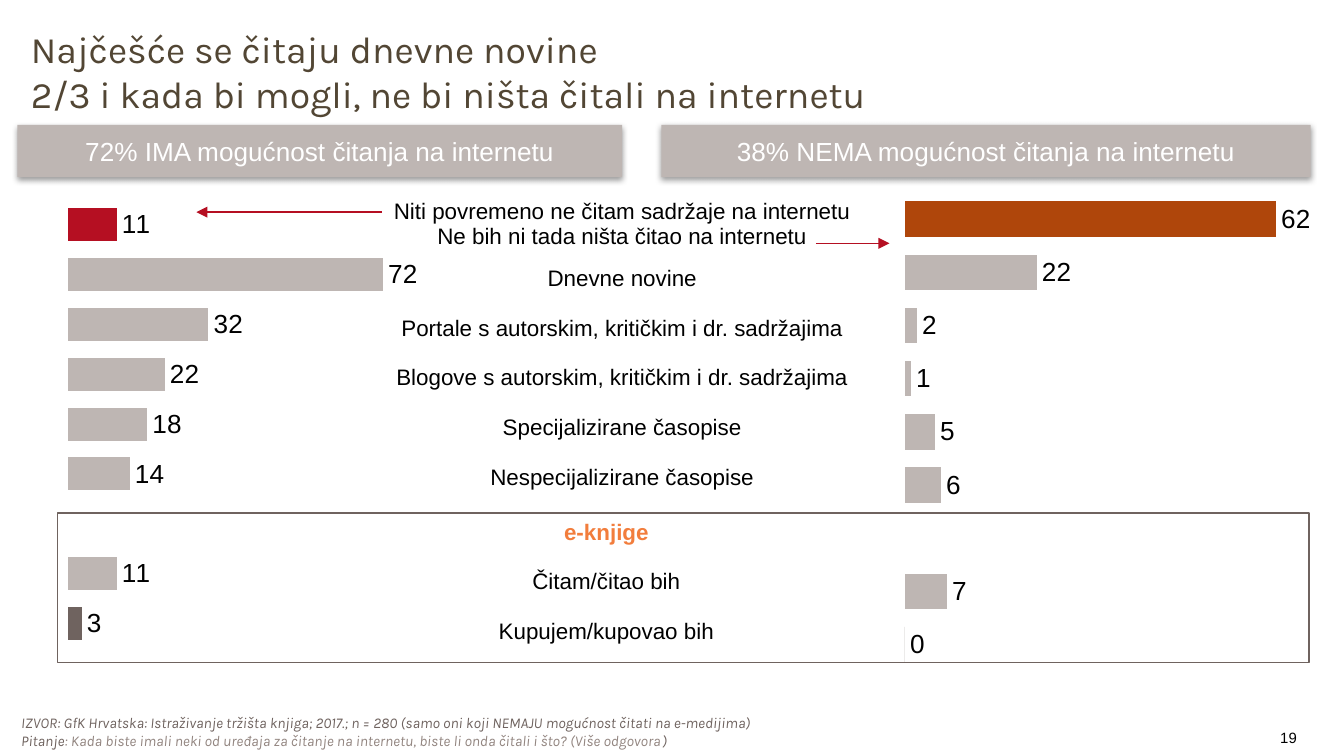
"""Build the slide on reading newspapers, magazines and e-books online."""
from lxml import etree
from pptx import Presentation
from pptx.chart.data import CategoryChartData
from pptx.dml.color import RGBColor
from pptx.enum.chart import XL_CHART_TYPE, XL_LABEL_POSITION
from pptx.enum.shapes import MSO_CONNECTOR, MSO_SHAPE
from pptx.enum.text import MSO_ANCHOR, MSO_AUTO_SIZE, PP_ALIGN
from pptx.oxml import parse_xml
from pptx.oxml.ns import nsdecls, qn
from pptx.util import Cm, Pt

BAR = XL_CHART_TYPE.BAR_CLUSTERED
OUTSIDE = XL_LABEL_POSITION.OUTSIDE_END
STRAIGHT = MSO_CONNECTOR.STRAIGHT
RECTANGLE = MSO_SHAPE.RECTANGLE
TOP, MIDDLE = MSO_ANCHOR.TOP, MSO_ANCHOR.MIDDLE
NO_FIT = MSO_AUTO_SIZE.NONE
CENTER, JUSTIFY, RIGHT = PP_ALIGN.CENTER, PP_ALIGN.JUSTIFY, PP_ALIGN.RIGHT

BLACK = RGBColor(0x00, 0x00, 0x00)
WHITE = RGBColor(0xFF, 0xFF, 0xFF)
OLIVE = RGBColor(0x52, 0x46, 0x34)
TAUPE = RGBColor(0x6F, 0x63, 0x5F)
LIGHT_TAUPE = RGBColor(0x92, 0x85, 0x80)
SAND = RGBColor(0xBE, 0xB6, 0xB3)
RED = RGBColor(0xB5, 0x0F, 0x22)
RUST = RGBColor(0xAF, 0x46, 0x0B)
ORANGE = RGBColor(0xF2, 0x7D, 0x3C)

TITLE = {"name": "Karla", "size": Pt(20), "bold": False, "color": OLIVE}
SOURCE = {"name": "Karla", "size": Pt(8), "italic": True, "color": TAUPE}
QUESTION = {**SOURCE, "color": LIGHT_TAUPE}
BANNER = {"name": "Arial", "size": Pt(14), "color": WHITE}
VALUE = {**BANNER, "color": BLACK}
LABEL = {**VALUE, "size": Pt(12)}
HEADING = {**LABEL, "bold": True, "color": ORANGE}
PAGE_NUMBER = {**VALUE, "size": Pt(8)}

PLAIN_TABLE = "{2D5ABB26-0587-4C30-8999-92F81FD0307C}"
TABLE_WIDTH = 10.72
ROW_HEIGHT = 0.94
BANNERS = [
    (0.33, 11.43, "72% IMA mogućnost čitanja na internetu"),
    (12.5, 12.27, "38% NEMA mogućnost čitanja na internetu"),
]
READING = [
    ["Niti povremeno ne čitam sadržaje na internetu", "Ne bih ni tada ništa čitao na internetu"],
    ["Dnevne novine"],
    ["Portale s autorskim, kritičkim i dr. sadržajima"],
    ["Blogove s autorskim, kritičkim i dr. sadržajima"],
    ["Specijalizirane časopise"],
    ["Nespecijalizirane časopise"],
]
BOOKS = [["e-knjige"], ["Čitam/čitao bih"], ["Kupujem/kupovao bih"]]
SOURCE_LINES = [
    [("IZVOR: GfK Hrvatska: Istraživanje tržišta knjiga; 2017.; n = 280 "
      "(samo oni koji NEMAJU mogućnost čitati na e-medijima)", SOURCE)],
    [("Pitanje", SOURCE),
     (": Kada biste imali neki od uređaja za čitanje na internetu, "
      "biste li onda čitali i što? (Više odgovora", QUESTION),
     (")", SOURCE)],
]


def format_font(font, style):
    """Apply a dict of format values to a font."""
    for key, value in style.items():
        if key == "color":
            font.color.rgb = value
        else:
            setattr(font, key, value)


def write_lines(frame, lines, align, anchor=MIDDLE):
    """Write one paragraph for each list of (text, style) spans."""
    frame.word_wrap = True
    frame.vertical_anchor = anchor
    for index, spans in enumerate(lines):
        para = frame.add_paragraph() if index else frame.paragraphs[0]
        para.alignment = align
        for text, style in spans:
            span = para.add_run()
            span.text = text
            format_font(span.font, style)


def place_title(page):
    """Move and fill the title placeholder."""
    title = page.shapes.title
    title.left, title.top, title.width, title.height = Cm(0.33), Cm(0.64), Cm(22.4), Cm(1.42)
    title.text_frame.auto_size = NO_FIT
    lines = ["Najčešće se čitaju dnevne novine",
             "2/3 i kada bi mogli, ne bi ništa čitali na internetu"]
    write_lines(title.text_frame, [[(line, TITLE)] for line in lines], JUSTIFY)


def add_text(page, left, top, width, height, lines, align):
    """Add a text box and return it."""
    box = page.shapes.add_textbox(Cm(left), Cm(top), Cm(width), Cm(height))
    write_lines(box.text_frame, lines, align)
    return box


def add_banner(page, left, width, text):
    """Add a filled heading with a soft shadow below it."""
    box = page.shapes.add_shape(RECTANGLE, Cm(left), Cm(2.36), Cm(width), Cm(0.99))
    box.fill.solid()
    box.fill.fore_color.rgb = SAND
    box.line.fill.background()
    box._element.spPr.append(parse_xml(
        f'<a:effectLst {nsdecls("a")}><a:outerShdw blurRad="{Pt(3.1)}" dist="{Pt(1.6)}" '
        'dir="5400000" rotWithShape="0"><a:srgbClr val="000000"><a:alpha val="38000"/>'
        '</a:srgbClr></a:outerShdw></a:effectLst>'))
    write_lines(box.text_frame, [[(text, BANNER)]], CENTER)


def add_frame(page):
    """Add the outline around the e-book rows."""
    box = page.shapes.add_shape(RECTANGLE, Cm(1.09), Cm(9.7), Cm(23.65), Cm(2.82))
    box.shadow.inherit = False
    box.fill.background()
    box.line.color.rgb = TAUPE
    box.line.width = Pt(0.75)


def add_labels(page, left, top, rows, first_style):
    """Add a one-column table of row labels without fill or borders."""
    shape = page.shapes.add_table(len(rows), 1, Cm(left), Cm(top),
                                  Cm(TABLE_WIDTH), Cm(ROW_HEIGHT * len(rows)))
    table = shape.table
    table.first_row = table.horz_banding = False
    table._tbl.tblPr.find(qn("a:tableStyleId")).text = PLAIN_TABLE
    for index, lines in enumerate(rows):
        table.rows[index].height = Cm(ROW_HEIGHT)
        cell = table.cell(index, 0)
        cell.fill.background()
        style = LABEL if index else first_style
        write_lines(cell.text_frame, [[(line, style)] for line in lines], CENTER)
        cell.vertical_anchor = TOP


def set_plot_area(chart, layout):
    """Fix the inner plot area as fractions of the chart."""
    area = chart._chartSpace.chart.plotArea
    for old in area.findall(qn("c:layout")):
        area.remove(old)
    values = "".join(f'<c:{key} val="{value}"/>' for key, value in layout.items())
    area.insert(0, parse_xml(
        f'<c:layout {nsdecls("c")}><c:manualLayout><c:layoutTarget val="inner"/>'
        f'<c:xMode val="edge"/><c:yMode val="edge"/>{values}</c:manualLayout></c:layout>'))


def add_bars(page, left, top, width, values, maximum, first_color, layout):
    """Add a bar chart with hidden axes and value labels."""
    data = CategoryChartData(number_format="#,##0")
    data.categories = [str(number) for number in range(1, len(values) + 1)]
    data.add_series("Series 1", values)
    chart = page.shapes.add_chart(BAR, Cm(left), Cm(top), Cm(width), Cm(9.63), data).chart
    format_font(chart.font, LABEL)
    chart.has_legend = chart.has_title = False
    chart.category_axis.reverse_order = True
    chart.value_axis.minimum_scale = 0
    chart.value_axis.maximum_scale = maximum
    chart.value_axis.has_major_gridlines = False
    chart.category_axis.visible = chart.value_axis.visible = False
    plot = chart.plots[0]
    plot.gap_width = 50
    plot.vary_by_categories = False
    series = plot.series[0]
    series.invert_if_negative = False
    for target, color in [(series, SAND), (series.points[0], first_color),
                          (series.points[len(values) - 1], TAUPE)]:
        target.format.fill.solid()
        target.format.fill.fore_color.rgb = color
    labels = series.data_labels
    format_font(labels.font, VALUE)
    labels.show_value = True
    labels.position = OUTSIDE
    labels.number_format = "#,##0"
    labels.number_format_is_linked = False
    set_plot_area(chart, layout)


def add_arrow(page, start, end, height):
    """Add a level red arrow."""
    arrow = page.shapes.add_connector(STRAIGHT, Cm(start), Cm(height), Cm(end), Cm(height))
    arrow.line.color.rgb = RED
    arrow.line.width = Pt(0.75)
    etree.SubElement(arrow.line._get_or_add_ln(), qn("a:tailEnd"), type="triangle")
    etree.SubElement(arrow._element.spPr, qn("a:effectLst"))


def main():
    """Build and save the deck."""
    deck = Presentation()
    deck.slide_width, deck.slide_height = Cm(25.4), Cm(14.29)
    page = deck.slides.add_slide(deck.slide_layouts[5])
    place_title(page)
    number = add_text(page, 20.9, 13.74, 3.61, 0.41, [[("19", PAGE_NUMBER)]], RIGHT)
    for side in ("left", "top", "right", "bottom"):
        setattr(number.text_frame, f"margin_{side}", 0)
    add_bars(page, 1.09, 3.3, 6.81, [11, 72, 32, 22, 18, 14, None, 11, 3], 80, RED,
             {"x": 0.03, "y": 0.05, "w": 0.97, "h": 0.88})
    add_bars(page, 16.94, 3.35, 8.08, [62, 22, 2, 1, 5, 6, None, 7, 0], 70, RUST,
             {"x": 0.02, "y": 0.03, "w": 0.98, "h": 0.94})
    add_text(page, 0.15, 13.54, 24.16, 0.56, SOURCE_LINES, JUSTIFY)
    add_frame(page)
    for left, width, text in BANNERS:
        add_banner(page, left, width, text)
    add_labels(page, 6.4, 3.63, READING, LABEL)
    add_labels(page, 6.1, 9.7, BOOKS, HEADING)
    add_arrow(page, 7.21, 3.71, 4.01)
    add_arrow(page, 15.42, 16.81, 4.6)
    deck.save("out.pptx")


if __name__ == "__main__":
    main()
